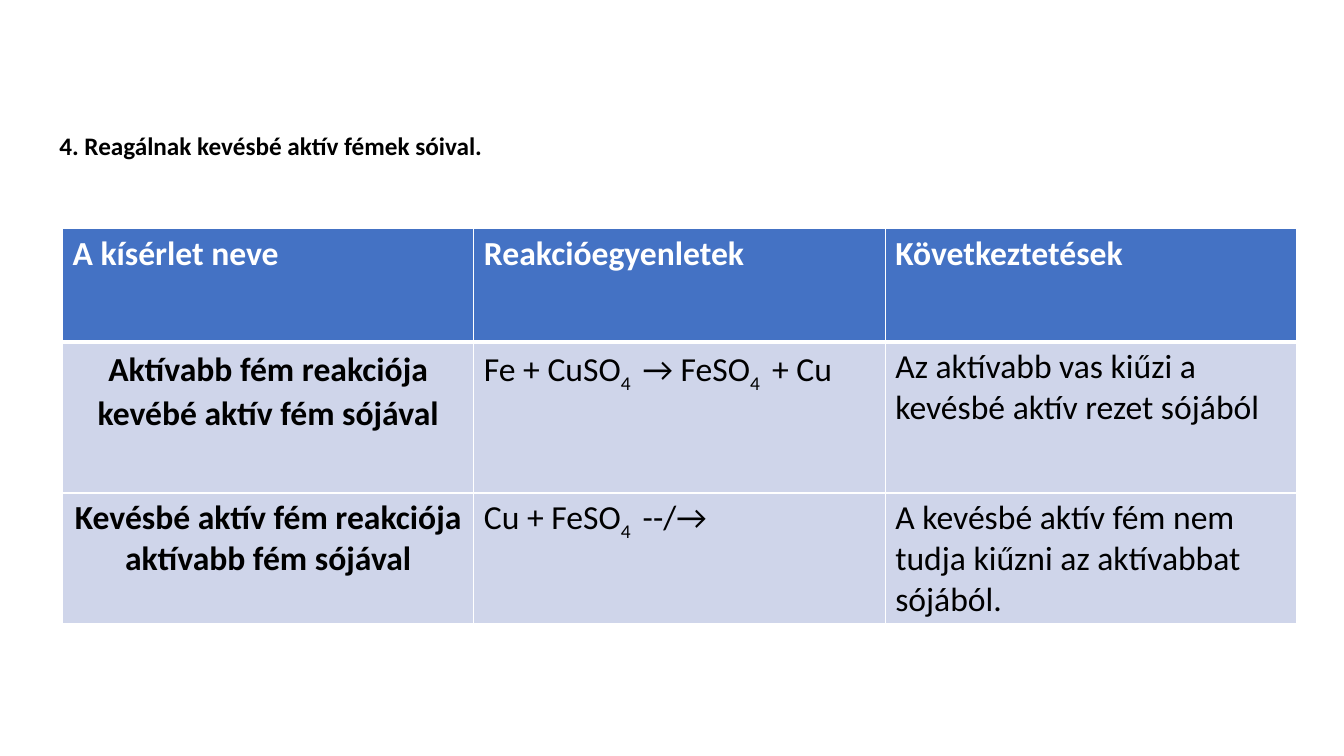
from lxml import etree
from pptx import Presentation
from pptx.dml.color import RGBColor
from pptx.enum.text import MSO_AUTO_SIZE, PP_ALIGN
from pptx.oxml.ns import qn
from pptx.util import Inches, Pt

FONT = "Calibri"
WHITE, BLACK, BLUE, PALE = "FFFFFF", "000000", "4472C4", "CFD5EA"
COLUMNS = 3


def rgb(color):
    return RGBColor.from_string(color)


def add_text(tf, parts, size=24, color=BLACK, bold=False, align=None,
             spacing=None, after=None):
    """Write one paragraph; every second part is a subscript."""
    tf.word_wrap = True
    p = tf.paragraphs[0]
    p.alignment, p.line_spacing = align, spacing
    if after is not None:
        p.space_after = Pt(after)
    for i, part in enumerate(parts):
        r = p.add_run()
        r.text = part
        r.font.name, r.font.size, r.font.bold = FONT, Pt(size), bold
        r.font.color.rgb = rgb(color)
        if i % 2:
            r.font._element.set("baseline", "-25000")


def set_borders(cell, top=1, bottom=1):
    tcPr = cell._tc.get_or_add_tcPr()
    for side, width in (("L", 1), ("R", 1), ("T", top), ("B", bottom)):
        ln = etree.SubElement(tcPr, qn(f"a:ln{side}"), w=str(Pt(width)))
        fill = etree.SubElement(ln, qn("a:solidFill"))
        etree.SubElement(fill, qn("a:srgbClr"), val=WHITE)


def add_cell(cell, parts, fill, top=1, bottom=1, **text_format):
    set_borders(cell, top, bottom)
    cell.fill.solid()
    cell.fill.fore_color.rgb = rgb(fill)
    add_text(cell.text_frame, parts, **text_format)


def add_grid(s, x, y, w, heights):
    shape = s.shapes.add_table(len(heights), COLUMNS, Inches(x), Inches(y),
                               Inches(w), Inches(sum(heights)))
    table = shape.table
    table.first_row = table.horz_banding = False
    for column in table.columns:
        column.width = Inches(w / COLUMNS)
    for row, height in zip(table.rows, heights):
        row.height = Inches(height)
    return table


def add_heading(s, x, y, w, h):
    tf = s.shapes.add_textbox(Inches(x), Inches(y), Inches(w), Inches(h)).text_frame
    tf.auto_size = MSO_AUTO_SIZE.SHAPE_TO_FIT_TEXT
    add_text(tf, ["4. Reagálnak kevésbé aktív fémek sóival."], size=18, bold=True)


def add_active_metal_table(s, x, y, w, heights):
    table = add_grid(s, x, y, w, heights)
    # Header row
    headers = ("A kísérlet neve", "Reakcióegyenletek", "Következtetések")
    for i, header in enumerate(headers):
        add_cell(table.cell(0, i), [header], BLUE, bottom=3, color=WHITE, bold=True)
    # Experiment row
    loose = {"spacing": 1.07, "after": 8}
    add_cell(table.cell(1, 0), ["Aktívabb fém reakciója kevébé aktív fém sójával"],
             PALE, top=3, bold=True, align=PP_ALIGN.CENTER, **loose)
    add_cell(table.cell(1, 1), ["Fe + CuSO", "4 ", " → FeSO", "4 ", " + Cu"],
             PALE, top=3, **loose)
    add_cell(table.cell(1, 2), ["Az aktívabb vas kiűzi a kevésbé aktív rezet sójából"],
             PALE, top=3)


def add_less_active_metal_table(s, x, y, w, heights):
    table = add_grid(s, x, y, w, heights)
    add_cell(table.cell(0, 0), ["Kevésbé aktív fém reakciója aktívabb fém sójával"],
             PALE, bold=True, align=PP_ALIGN.CENTER)
    add_cell(table.cell(0, 1), ["Cu + FeSO", "4 ", " --/→"], PALE)
    add_cell(table.cell(0, 2),
             ["A kevésbé aktív fém nem tudja kiűzni az aktívabbat sójából."], PALE)


def main():
    prs = Presentation()
    prs.slide_width, prs.slide_height = Inches(13.33), Inches(7.5)
    s = prs.slides.add_slide(prs.slide_layouts[6])

    left, top, width = 0.62, 2.27, 12.24
    heights = [1.12, 1.5]
    add_active_metal_table(s, left, top, width, heights)
    add_heading(s, 0.49, 1.24, 6.67, 0.4)
    add_less_active_metal_table(s, left, top + sum(heights), width, [1.3])
    prs.save("out.pptx")


if __name__ == "__main__":
    main()
